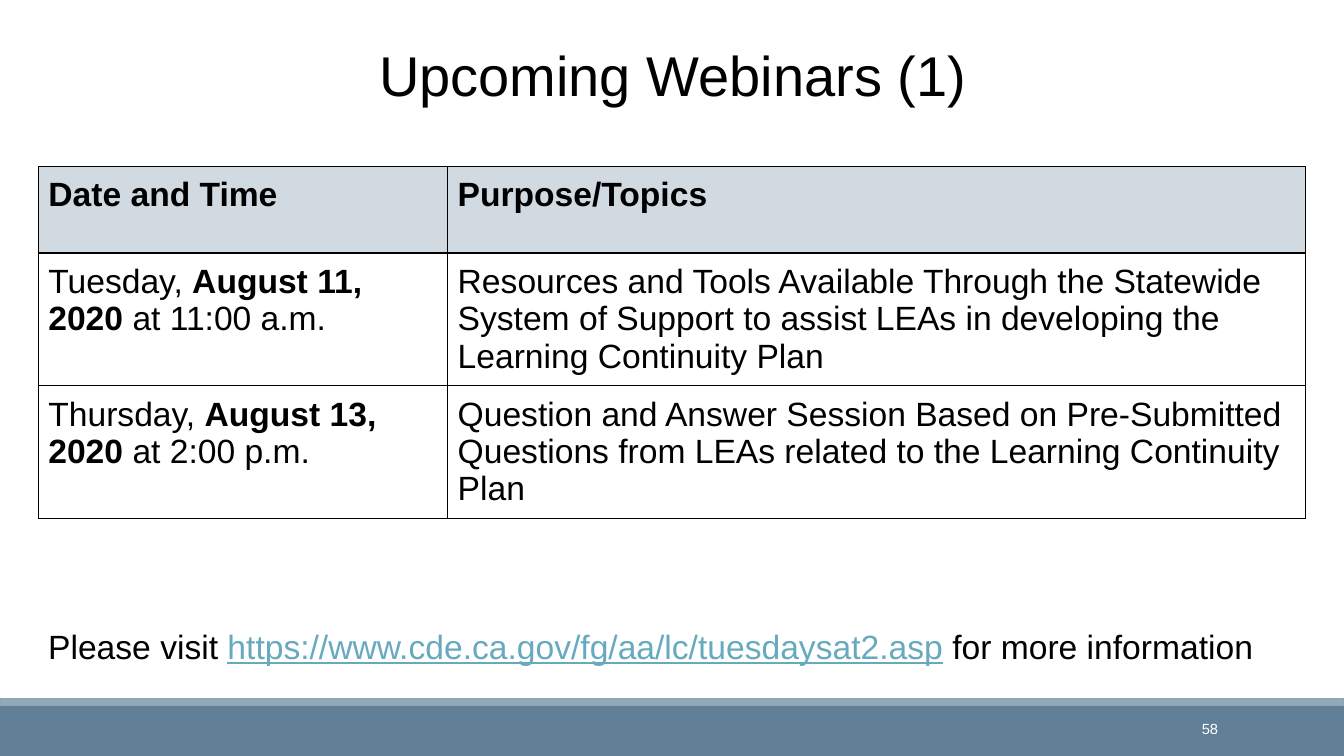
"""Build the upcoming webinars slide with its schedule table and link line."""
from dataclasses import dataclass

from lxml import etree
from pptx import Presentation
from pptx.dml.color import RGBColor
from pptx.enum import shapes, text
from pptx.oxml import ns
from pptx.util import Inches, Pt

BLACK = RGBColor(0x00, 0x00, 0x00)
WHITE = RGBColor(0xFF, 0xFF, 0xFF)
SLATE = RGBColor(0x61, 0x80, 0x97)
MIST = RGBColor(0x92, 0xA9, 0xB9)
MIST_EDGE = RGBColor(0x8F, 0xA2, 0xB6)
HEADER = RGBColor(0xD1, 0xD9, 0xE1)
LINK = RGBColor(0x67, 0xAA, 0xBF)

BODY = {"name": "Arial", "size": Pt(24), "bold": False}
SIDES = ("left", "right", "top", "bottom")


@dataclass(frozen=True)
class Span:
    """A run of text with its emphasis."""
    words: str
    bold: bool = False
    color: RGBColor = BLACK
    underline: bool = False


@dataclass(frozen=True)
class Band:
    """A full-width footer strip."""
    top: float
    height: float
    fill: RGBColor
    edge: RGBColor | None = None


BANDS = (Band(7.0, 0.5, SLATE), Band(6.93, 0.07, MIST, MIST_EDGE))
COLUMNS = (4.06, 8.51)
ROWS = (0.86, 1.2, 1.16)
SCHEDULE = (
    ((Span("Date and Time", True),), (Span("Purpose/Topics", True),)),
    (
        (Span("Tuesday, "), Span("August 11, 2020 ", True), Span("at 11:00 a.m.")),
        (Span("Resources and Tools Available Through the Statewide System of Support "
              "to assist LEAs in developing the Learning Continuity Plan"),),
    ),
    (
        (Span("Thursday, "), Span("August 13, 2020 ", True), Span("at 2:00 p.m.")),
        (Span("Question and Answer Session Based on Pre-Submitted Questions from LEAs "
              "related to the Learning Continuity Plan"),),
    ),
)
VISIT = (
    Span("Please visit "),
    Span("https://www.cde.ca.gov/fg/aa/lc/tuesdaysat2.asp", color=LINK, underline=True),
    Span(" for more information"),
)


def apply(target: object, values: dict) -> None:
    """Set each named attribute on the target."""
    for name, value in values.items():
        setattr(target, name, value)


def write(p, spans: tuple[Span, ...], **changes) -> None:
    """Add formatted runs to a paragraph."""
    for span in spans:
        r = p.add_run()
        r.text = span.words
        apply(r.font, BODY | {"bold": span.bold, "underline": span.underline} | changes)
        r.font.color.rgb = span.color


def place(sp, left: float, top: float, width: float, height: float) -> None:
    """Move and size a shape in inches."""
    apply(sp, {"left": Inches(left), "top": Inches(top),
               "width": Inches(width), "height": Inches(height)})


def add_band(slide, band: Band, width: int) -> None:
    """Draw one footer strip."""
    sp = slide.shapes.add_shape(shapes.MSO_SHAPE.RECTANGLE, 0, Inches(band.top),
                                width, Inches(band.height))
    sp.shadow.inherit = False
    sp.fill.solid()
    sp.fill.fore_color.rgb = band.fill
    if band.edge is None:
        sp.line.fill.background()
    else:
        sp.line.color.rgb = band.edge
        sp.line.width = Pt(1.25)


def add_borders(cell) -> None:
    """Give a cell thin black borders on all sides."""
    tc_pr = cell._tc.get_or_add_tcPr()
    for side in SIDES:
        ln = etree.SubElement(tc_pr, ns.qn(f"a:ln{side[0].upper()}"), w=str(Pt(1)))
        fill = etree.SubElement(ln, ns.qn("a:solidFill"))
        etree.SubElement(fill, ns.qn("a:srgbClr"), val=str(BLACK))


def add_schedule(slide) -> None:
    """Draw the webinar table."""
    table = slide.shapes.add_table(len(ROWS), len(COLUMNS), Inches(0.38), Inches(1.65),
                                   Inches(sum(COLUMNS)), Inches(sum(ROWS))).table
    for column, width in zip(table.columns, COLUMNS):
        column.width = Inches(width)
    for i, (row, height) in enumerate(zip(table.rows, ROWS)):
        row.height = Inches(height)
        for cell, spans in zip(row.cells, SCHEDULE[i]):
            apply(cell, {f"margin_{side}": Inches(0.1) for side in SIDES})
            add_borders(cell)
            if i == 0:
                cell.fill.solid()
                cell.fill.fore_color.rgb = HEADER
            else:
                cell.fill.background()
            write(cell.text_frame.paragraphs[0], spans)


def add_text(slide, box: tuple[float, float, float, float], spans: tuple[Span, ...],
             frame: dict, align: text.PP_ALIGN, **changes) -> None:
    """Add a wrapped one-paragraph text box."""
    tf = slide.shapes.add_textbox(*map(Inches, box)).text_frame
    apply(tf, {"word_wrap": True} | frame)
    p = tf.paragraphs[0]
    p.alignment = align
    write(p, spans, **changes)


def main() -> None:
    """Assemble and save the slide."""
    prs = Presentation()
    apply(prs, {"slide_width": Inches(13.33), "slide_height": Inches(7.5)})
    slide = prs.slides.add_slide(prs.slide_layouts[5])
    for band in BANDS:
        add_band(slide, band, prs.slide_width)

    title = slide.shapes.title
    place(title, 1.17, 0.17, 11, 0.95)
    apply(title.text_frame, {"vertical_anchor": text.MSO_ANCHOR.BOTTOM,
                             "auto_size": text.MSO_AUTO_SIZE.NONE})
    p = title.text_frame.paragraphs[0]
    apply(p, {"alignment": text.PP_ALIGN.CENTER, "line_spacing": 0.85})
    write(p, (Span("Upcoming Webinars (1)"),), size=Pt(40))

    add_schedule(slide)
    add_text(slide, (0.38, 6.11, 12.57, 0.51), VISIT,
             {f"margin_{side}": Inches(0.1) for side in SIDES}, text.PP_ALIGN.LEFT)
    add_text(slide, (10.75, 7.03, 1.43, 0.4), (Span("58", color=WHITE),),
             {"vertical_anchor": text.MSO_ANCHOR.MIDDLE}, text.PP_ALIGN.RIGHT, size=Pt(10.5))
    prs.save("out.pptx")


if __name__ == "__main__":
    main()
